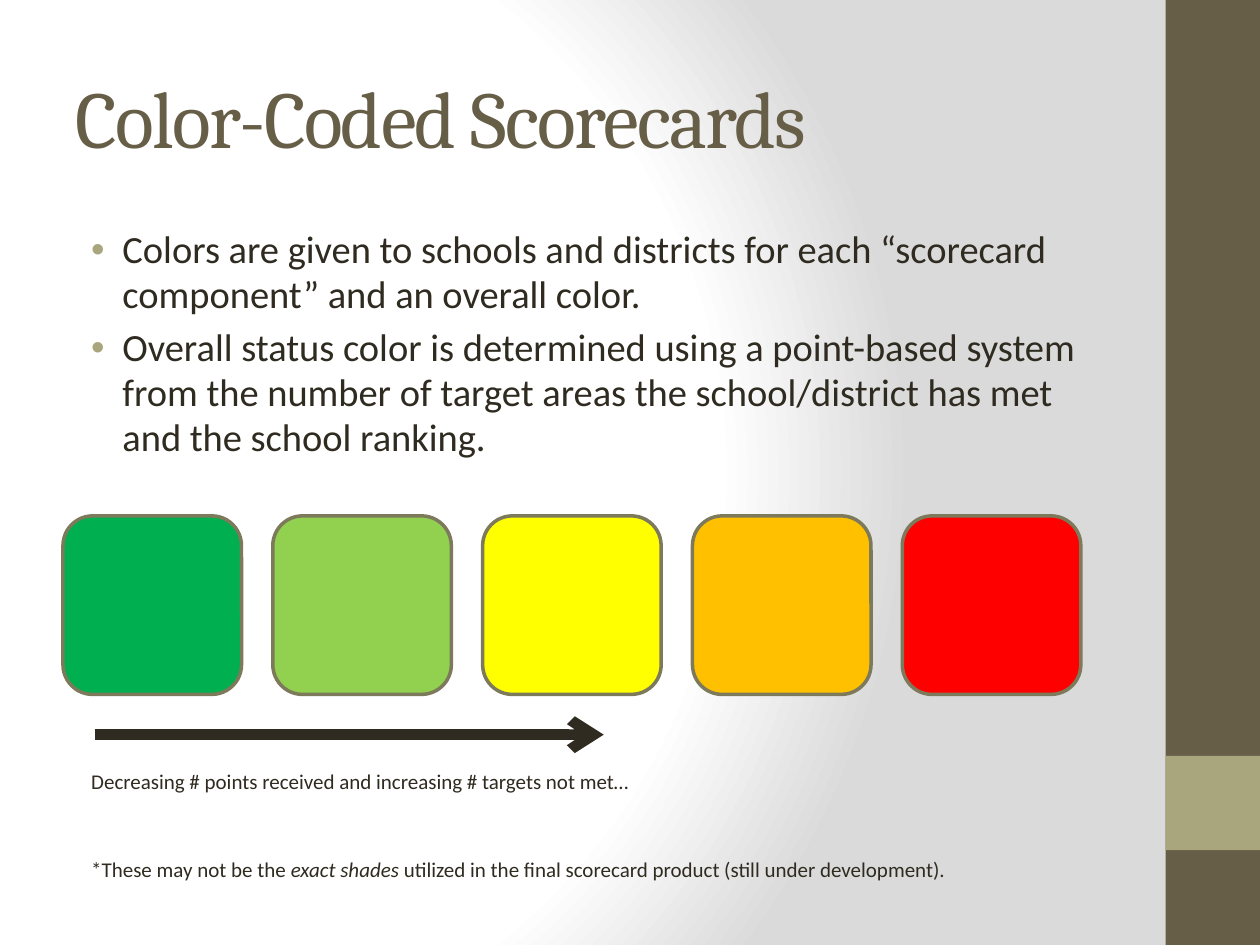
from lxml import etree
from pptx import Presentation
from pptx.dml.color import RGBColor
from pptx.enum.shapes import MSO_CONNECTOR, MSO_SHAPE
from pptx.enum.text import MSO_ANCHOR
from pptx.oxml.ns import qn
from pptx.util import Cm, Pt

LINE = MSO_CONNECTOR.STRAIGHT
RECT = MSO_SHAPE.RECTANGLE
ROUND = MSO_SHAPE.ROUNDED_RECTANGLE
TOP, MIDDLE = MSO_ANCHOR.TOP, MSO_ANCHOR.MIDDLE

TITLE = "Color-Coded Scorecards"
POINTS = [
    "Colors are given to schools and districts for each “scorecard component” and an overall color.",
    "Overall status color is determined using a point-based system from the number of target areas "
    "the school/district has met and the school ranking.",
]
NOTES = [
    (15.37, [("Decreasing # points received and increasing # targets not met…", False)]),
    (17.15, [
        ("*These may not be the ", False),
        ("exact shades", True),
        (" utilized in the final scorecard product (still under development).", False),
    ]),
]
SHADES = ["00B050", "92D050", "FFFF00", "FFC000", "FF0000"]
BANDS = [(0, 19.05, "brand"), (15.24, 1.9, "accent")]
THEME = {
    "brand": "675E47", "accent": "A9A57C", "ink": "2F2B20", "edge": "7D7A5C",
    "head": "Cambria", "body": "Calibri",
    "title": 46, "point": 22, "note": 12,
    "stops": [(0, "FFFFFF"), (75, "FFFFFF"), (100, "DADADA")],
}
LEFT, WIDE = 1.27, 21.17
TILE, PITCH, ROW = 3.6, 4.23, 10.4


def color(name):
    return RGBColor.from_string(THEME.get(name, name))


def add(parent, tag, **attrs):
    return etree.SubElement(parent, qn(tag), attrs)


def paint(slide):
    slide.background.fill.gradient()
    grad = slide.element.find(".//" + qn("a:gradFill"))
    for child in list(grad):
        grad.remove(child)
    stops = add(grad, "a:gsLst")
    for pos, shade in THEME["stops"]:
        add(add(stops, "a:gs", pos=str(pos * 1000)), "a:srgbClr", val=shade)
    path = add(grad, "a:path", path="circle")
    add(path, "a:fillToRect", l="20000", t="50000", r="100000", b="50000")


def block(slide, kind, x, y, w, h, fill):
    shape = slide.shapes.add_shape(kind, Cm(x), Cm(y), Cm(w), Cm(h))
    shape.shadow.inherit = False
    shape.fill.solid()
    shape.fill.fore_color.rgb = color(fill)
    shape.line.fill.background()
    return shape


def box(slide, x, y, w, h, anchor=TOP):
    frame = slide.shapes.add_textbox(Cm(x), Cm(y), Cm(w), Cm(h)).text_frame
    frame.word_wrap = True
    frame.vertical_anchor = anchor
    return frame


def style(para, face, size, tint):
    para.font.name = THEME[face]
    para.font.size = Pt(THEME[size])
    para.font.color.rgb = color(tint)


def head(slide):
    para = box(slide, LEFT, 0.76, WIDE, 3.18, MIDDLE).paragraphs[0]
    run = para.add_run()
    run.text = TITLE
    run._r.get_or_add_rPr().set("spc", "-100")
    style(para, "head", "title", "brand")


def points(slide):
    frame = box(slide, LEFT, 4.45, WIDE, 5.7)
    for i, text in enumerate(POINTS):
        para = frame.add_paragraph() if i else frame.paragraphs[0]
        para.add_run().text = text
        para.line_spacing = 0.98
        para.space_before = Pt(4.4 if i else 0)
        props = para._p.get_or_add_pPr()
        props.set("marL", str(Cm(0.95)))
        props.set("indent", str(Cm(-0.63)))
        add(add(props, "a:buClr"), "a:srgbClr", val=THEME["accent"])
        add(props, "a:buFont", typeface="Arial")
        add(props, "a:buChar", char="•")
        style(para, "body", "point", "ink")


def notes(slide):
    for y, parts in NOTES:
        para = box(slide, 1.59, y, 20.85, 0.9).paragraphs[0]
        for text, slant in parts:
            run = para.add_run()
            run.text = text
            if slant:
                run.font.italic = True
        style(para, "body", "note", "ink")


def tiles(slide):
    for i, shade in enumerate(SHADES):
        tile = block(slide, ROUND, LEFT + i * PITCH, ROW, TILE, TILE, shade)
        tile.line.color.rgb = color("edge")
        tile.line.width = Pt(2)


def arrow(slide):
    link = slide.shapes.add_connector(LINE, Cm(1.91), Cm(14.81), Cm(12.17), Cm(14.81))
    link.line.color.rgb = color("ink")
    link.line.width = Pt(6)
    add(link.line._get_or_add_ln(), "a:tailEnd", type="arrow")
    add(link._element.spPr, "a:effectLst")


def main():
    deck = Presentation()
    deck.slide_width, deck.slide_height = Cm(25.4), Cm(19.05)
    slide = deck.slides.add_slide(deck.slide_layouts[6])
    paint(slide)
    for y, h, fill in BANDS:
        block(slide, RECT, 23.5, y, 1.9, h, fill)
    head(slide)
    points(slide)
    tiles(slide)
    arrow(slide)
    notes(slide)
    deck.save("out.pptx")


if __name__ == "__main__":
    main()
